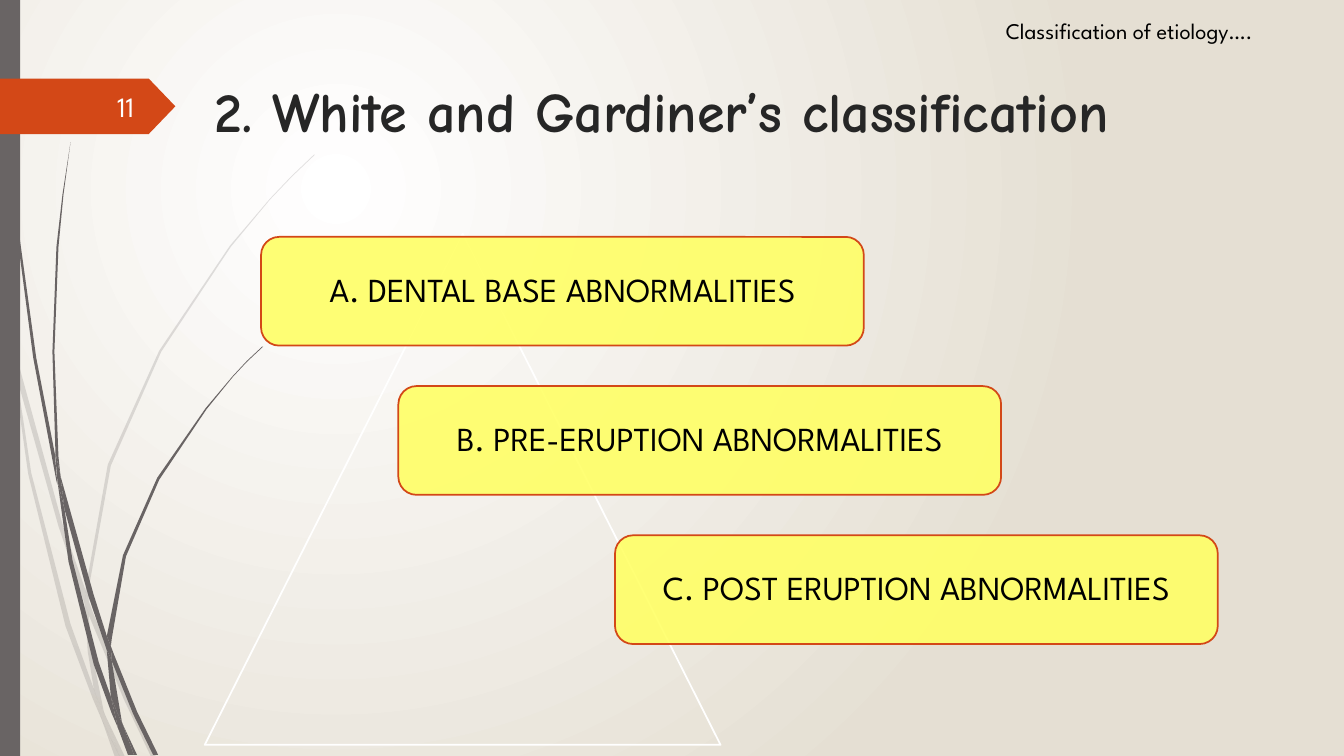
from lxml import etree
from pptx import Presentation
from pptx import util as u
from pptx.dml.color import RGBColor
from pptx.enum import shapes, text
from pptx.oxml import ns

SLIDE_WIDTH, SLIDE_HEIGHT = 33.87, 19.05
BODY_FONT, TITLE_FONT = "League Spartan", "Comic Neue"
GREY, ORANGE, YELLOW, WHITE, BLACK = "696464", "D34817", "FFFF66", "FFFFFF", "000000"

# Outlines of the grass pieces, on a grid of 2.54 cm
GRASS_UNIT = 2.54
FAINT_GRASS = [
    [(.11, 3.5), (.09, 3.22), (0, 2.82), (0, 2.99), (.1, 3.44)],
    [(.58, 5.22), (.84, 5.99), (.85, 5.86), (.62, 5.2), (.14, 3.45), (.17, 3.76)],
    [(.92, 6.07), (.88, 5.96), (.88, 6.1), (1.23, 6.94), (1.5, 7.51), (1.55, 7.51),
     (1.27, 6.92)],
    [(1.19, 7.51), (1.24, 7.51), (1.05, 7.11)],
    [(.93, 6.83), (.7, 6.19), (.31, 4.69), (.17, 3.76), (.11, 3.5), (.28, 4.7),
     (.65, 6.21), (.92, 6.93), (1.01, 7.14), (.99, 7.07)],
    [(.84, 5.99), (.87, 6.46), (.93, 6.83), (.96, 6.92), (1.05, 7.11), (1.03, 7.06),
     (.91, 6.46), (.88, 6.1), (.88, 6.08)],
    [(.88, 5.84), (1.1, 4.62), (1.6, 3.49), (2.29, 2.45), (2.68, 1.98), (2.9, 1.75),
     (3.12, 1.54), (3.12, 1.53), (2.89, 1.75), (2.68, 1.97), (2.28, 2.44), (1.58, 3.48),
     (1.07, 4.61), (.85, 5.84), (.85, 5.86), (.88, 5.96)],
    [(1.01, 7.14), (1.14, 7.51), (1.19, 7.51)],
    [(.88, 6.08), (.88, 6.1), (.88, 5.96), (.85, 5.86), (.84, 5.99)],
    [(.96, 6.92), (.93, 6.83), (.99, 7.07), (1.01, 7.14), (1.19, 7.51), (1.05, 7.11)],
]
DARK_GRASS = [
    [(.07, 1.1), (.17, 2.33), (.33, 3.55), (.56, 4.77), (.57, 4.81), (.55, 4.57),
     (.55, 4.53), (.36, 3.55), (.19, 2.32), (.08, 1.09), (.05, .48), (.04, 0), (.03, 0),
     (.04, .48)],
    [(.88, 5.92), (1.06, 6.45), (1.06, 6.33), (1.06, 6.31), (.93, 5.9), (.6, 4.72),
     (.64, 5.05)],
    [(1.13, 6.49), (1.1, 6.41), (1.11, 6.56), (1.32, 7.08), (1.52, 7.49), (1.57, 7.49),
     (1.36, 7.06)],
    [(1.1, 6.91), (.98, 6.57), (.72, 5.56), (.64, 5.05), (.57, 4.77), (.68, 5.57),
     (.93, 6.59), (1.11, 7.08), (1.17, 7.22), (1.16, 7.17)],
    [(.6, 4.72), (.58, 4.53), (.54, 3.49), (.58, 2.45), (.63, 1.93), (.7, 1.41),
     (.62, 1.93), (.56, 2.45), (.52, 3.49), (.55, 4.49)],
    [(1.33, 7.49), (1.36, 7.49), (1.22, 7.19)],
    [(.57, 4.77), (.64, 5.05), (.6, 4.72), (.55, 4.49), (.55, 4.53)],
    [(1.11, 6.33), (1.25, 5.52), (1.58, 4.76), (2.05, 4.06), (2.31, 3.74), (2.45, 3.59),
     (2.61, 3.44), (2.6, 3.44), (2.45, 3.58), (2.31, 3.73), (2.04, 4.05), (1.56, 4.74),
     (1.22, 5.51), (1.06, 6.31), (1.1, 6.41)],
    [(1.17, 7.22), (1.27, 7.49), (1.31, 7.49)],
    [(1.06, 6.45), (1.1, 6.91), (1.16, 7.06), (1.22, 7.19), (1.21, 7.16), (1.11, 6.56),
     (1.09, 6.51)],
    [(1.06, 6.45), (1.09, 6.51), (1.11, 6.56), (1.1, 6.41), (1.06, 6.31), (1.06, 6.33)],
    [(1.16, 7.06), (1.1, 6.91), (1.16, 7.17), (1.17, 7.22), (1.3, 7.49), (1.33, 7.49),
     (1.22, 7.19)],
]
CLASSES = [
    (1.42, "A. DENTAL BASE ABNORMALITIES"),
    (4.88, "B. PRE-ERUPTION ABNORMALITIES"),
    (10.34, "C. POST ERUPTION ABNORMALITIES"),
]


def color(value):
    return RGBColor.from_string(value)


def to_cm(box):
    return [u.Cm(length) for length in box]


def style(shape, fill=None, line=None, opacity=100):
    shape.shadow.inherit = False
    if fill:
        shape.fill.solid()
        shape.fill.fore_color.rgb = color(fill)
        if opacity < 100:
            solid = shape.fill._xPr.find(ns.qn("a:solidFill"))
            etree.SubElement(solid[0], ns.qn("a:alpha"), val=str(opacity * 1000))
    else:
        shape.fill.background()
    if line:
        shape.line.color.rgb = color(line)
        shape.line.width = u.Pt(1.25)
    else:
        shape.line.fill.background()


def add_shape(slide, kind, box, **look):
    shape = slide.shapes.add_shape(kind, *to_cm(box))
    style(shape, **look)
    return shape


def write(shape, words, size, ink=BLACK, font=BODY_FONT, bold=False,
          align=text.PP_ALIGN.LEFT, anchor=text.MSO_ANCHOR.TOP):
    frame = shape.text_frame
    frame.word_wrap = True
    frame.vertical_anchor = anchor
    frame.text = words
    paragraph = frame.paragraphs[0]
    paragraph.alignment = align
    run_font = paragraph.runs[0].font
    run_font.name, run_font.size, run_font.bold = font, u.Pt(size), bold
    run_font.color.rgb = color(ink)
    return paragraph


def add_text(slide, box, words, size, **look):
    write(slide.shapes.add_textbox(*to_cm(box)), words, size, **look)


def paint_background(slide):
    fill = slide.background.fill
    fill.gradient()
    for stop, value in zip(fill.gradient_stops, (WHITE, "E5DFD3")):
        stop.color.rgb = color(value)
    gradient = slide.element.find(".//" + ns.qn("a:gradFill"))
    gradient.remove(gradient.find(ns.qn("a:lin")))
    circle = etree.SubElement(gradient, ns.qn("a:path"), path="circle")
    etree.SubElement(circle, ns.qn("a:fillToRect"), l="50000", t="50000", r="100000", b="100000")


def add_grass_piece(slide, left, top, points, opacity):
    outline = [to_cm((left + x * GRASS_UNIT, top + y * GRASS_UNIT)) for x, y in points]
    builder = slide.shapes.build_freeform(*outline[0])
    builder.add_line_segments(outline[1:], close=True)
    style(builder.convert_to_shape(), fill=GREY, opacity=opacity)


def add_side_decoration(slide, left, top, height):
    for pieces, opacity in ((FAINT_GRASS, 20), (DARK_GRASS, 100)):
        for points in pieces:
            add_grass_piece(slide, left, top, points, opacity)
    add_shape(slide, shapes.MSO_SHAPE.RECTANGLE, (left, top, .51, height), fill=GREY)


def add_number_tag(slide, left, top, width, height):
    tag = add_shape(slide, shapes.MSO_SHAPE.PENTAGON, (left, top, width, height), fill=ORANGE)
    tag.adjustments[0] = .48
    add_text(slide, (left + 1.47, top + .2, 2.16, 1.02), "11", 20, ink="FEFFFF",
             align=text.PP_ALIGN.RIGHT, anchor=text.MSO_ANCHOR.MIDDLE)


def add_class_diagram(slide, left, top, width, height):
    """Three staggered labels over a tall triangle."""
    add_shape(slide, shapes.MSO_SHAPE.ISOSCELES_TRIANGLE, (left, top, width, height), line=WHITE)
    for row, (indent, words) in enumerate(CLASSES):
        box = (left + indent, top + .08 + row * 3.76, 15.19, 2.74)
        label = add_shape(slide, shapes.MSO_SHAPE.ROUNDED_RECTANGLE, box,
                          fill=YELLOW, line=ORANGE, opacity=90)
        paragraph = write(label, words, 24, align=text.PP_ALIGN.CENTER,
                          anchor=text.MSO_ANCHOR.MIDDLE)
        paragraph.line_spacing = .9


def main():
    presentation = Presentation()
    presentation.slide_width = u.Cm(SLIDE_WIDTH)
    presentation.slide_height = u.Cm(SLIDE_HEIGHT)
    slide = presentation.slides.add_slide(presentation.slide_layouts[6])
    paint_background(slide)
    add_side_decoration(slide, 0, 0, SLIDE_HEIGHT)
    add_number_tag(slide, 0, 1.98, 4.42, 1.4)
    add_text(slide, (5.16, 1.8, 27.28, 3.56), "2. White and Gardiner’s classification", 40,
             ink="262626", font=TITLE_FONT, bold=True)
    add_class_diagram(slide, 5.16, 5.89, 13, 12.88)
    add_text(slide, (25.1, .3, 10.19, .94), "Classification of etiology….", 16)
    presentation.save("out.pptx")


if __name__ == "__main__":
    main()
